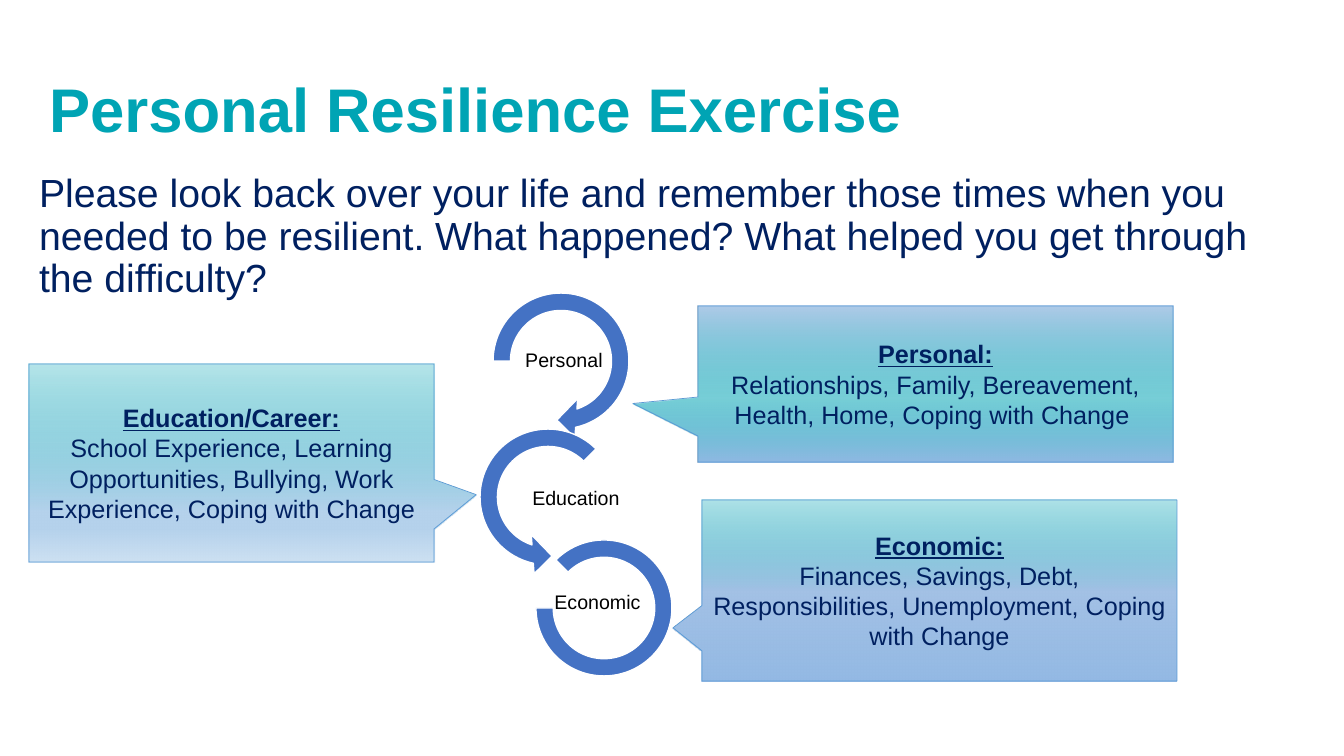
"""Build the Personal Resilience Exercise slide."""
from dataclasses import dataclass

from lxml import etree
from pptx import Presentation
from pptx import util as u
from pptx.dml.color import RGBColor
from pptx.enum import shapes, text
from pptx.oxml import ns

PX = u.Inches(7.5) / 756


@dataclass(frozen=True)
class Theme:
    font: str = "Arial"
    teal: str = "00A4B4"
    navy: str = "002060"
    black: str = "000000"
    white: str = "FFFFFF"
    ring: str = "4472C4"
    outline: str = "5B9BD5"
    title_size: int = 44
    body_size: int = 28
    callout_size: int = 18
    label_size: int = 14


@dataclass(frozen=True)
class Area:
    left: int
    top: int
    width: int
    height: int

    def emu(self) -> tuple[int, int, int, int]:
        return tuple(round(n * PX) for n in (self.left, self.top, self.width, self.height))


@dataclass(frozen=True)
class Stop:
    percent: int
    color: str
    alpha: int = 100


@dataclass(frozen=True)
class Ring:
    kind: shapes.MSO_SHAPE
    area: Area
    adjustments: tuple[float, ...]
    label: str
    label_area: Area


@dataclass(frozen=True)
class Callout:
    area: Area
    pointer: tuple[float, float]
    stops: tuple[Stop, ...]
    heading: str
    detail: str


THEME = Theme()
TITLE_AREA = Area(39, 40, 919, 146)
BODY_AREA = Area(29, 169, 1256, 498)
TITLE = "Personal Resilience Exercise"
BODY = ("Please look back over your life and remember those times when you needed to be "
        "resilient. What happened? What helped you get through the difficulty?")

RINGS = (
    Ring(shapes.MSO_SHAPE.CIRCULAR_ARROW, Area(482, 282, 158, 158),
         (0.11, 11.42, 45, 108, 0.125), "Personal", Area(515, 338, 98, 46)),
    Ring(shapes.MSO_SHAPE.LEFT_CIRCULAR_ARROW, Area(469, 418, 158, 158),
         (0.11, 11.42, 63, 189, 0.125), "Education", Area(515, 475, 122, 48)),
    Ring(shapes.MSO_SHAPE.BLOCK_ARC, Area(536, 540, 136, 136),
         (135, 108, 0.127), "Economic", Area(547, 575, 101, 56)),
)

CALLOUTS = (
    Callout(Area(698, 306, 475, 156), (-0.637, 0.125),
            (Stop(0, "B1CBE9"), Stop(59, THEME.teal, 53), Stop(100, "93B9E4")),
            "Personal:",
            "Relationships, Family, Bereavement, Health, Home, Coping with Change "),
    Callout(Area(29, 364, 405, 198), (0.604, 0.16),
            (Stop(0, THEME.teal, 28), Stop(74, "B5D2EC"), Stop(83, "B5D2EC"),
             Stop(100, "CEE1F2")),
            "Education/Career:",
            "School Experience, Learning Opportunities, Bullying, Work Experience, "
            "Coping with Change"),
    Callout(Area(702, 500, 475, 181), (-0.561, 0.206),
            (Stop(0, THEME.teal, 31), Stop(50, "A3C1E5"), Stop(100, "93B9E4")),
            "Economic:",
            "Finances, Savings, Debt, Responsibilities, Unemployment, Coping with Change"),
)


def style(para, size: int, color: str, align, bold: bool = False, spacing: float = 1.0) -> None:
    """Format one paragraph."""
    para.alignment = align
    para.line_spacing = spacing
    para.space_before = u.Pt(0)
    para.font.name = THEME.font
    para.font.size = u.Pt(size)
    para.font.bold = bold
    para.font.color.rgb = RGBColor.from_string(color)


def fill_placeholder(box, area: Area, words: str, size: int, color: str, bold: bool) -> None:
    """Move a placeholder and give it unbulleted text."""
    box.left, box.top, box.width, box.height = area.emu()
    frame = box.text_frame
    frame.text = words
    frame.word_wrap = True
    frame.auto_size = text.MSO_AUTO_SIZE.NONE
    para = frame.paragraphs[0]
    properties = para._p.get_or_add_pPr()
    properties.set("marL", "0")
    properties.set("indent", "0")
    etree.SubElement(properties, ns.qn("a:buNone"))
    style(para, size, color, text.PP_ALIGN.LEFT, bold, 0.9)


def add_outlined(parent, kind, area: Area, adjustments: tuple[float, ...],
                 color: str, width: float):
    """Add an adjusted preset shape with a plain outline."""
    shape = parent.add_shape(kind, *area.emu())
    shape.shadow.inherit = False
    for index, value in enumerate(adjustments):
        shape.adjustments[index] = value
    shape.line.color.rgb = RGBColor.from_string(color)
    shape.line.width = u.Pt(width)
    return shape


def add_ring(parent, ring: Ring) -> None:
    """Draw a ring and the label inside it."""
    shape = add_outlined(parent, ring.kind, ring.area, ring.adjustments, THEME.white, 1)
    shape.fill.solid()
    shape.fill.fore_color.rgb = RGBColor.from_string(THEME.ring)
    frame = parent.add_textbox(*ring.label_area.emu()).text_frame
    frame.word_wrap = True
    frame.vertical_anchor = text.MSO_ANCHOR.MIDDLE
    frame.margin_left = frame.margin_right = frame.margin_top = frame.margin_bottom = round(PX)
    frame.text = ring.label
    style(frame.paragraphs[0], THEME.label_size, THEME.black, text.PP_ALIGN.CENTER, spacing=0.9)


def set_gradient(shape, stops: tuple[Stop, ...]) -> None:
    """Fill a shape from top to bottom through the given stops."""
    shape.fill.gradient()
    shape.fill.gradient_angle = 270
    stop_list = shape._element.spPr.find(".//" + ns.qn("a:gsLst"))
    for old in list(stop_list):
        stop_list.remove(old)
    for stop in stops:
        entry = etree.SubElement(stop_list, ns.qn("a:gs"), pos=str(stop.percent * 1000))
        color = etree.SubElement(entry, ns.qn("a:srgbClr"), val=stop.color)
        if stop.alpha < 100:
            etree.SubElement(color, ns.qn("a:alpha"), val=str(stop.alpha * 1000))


def add_callout(parent, callout: Callout) -> None:
    """Draw a callout with a heading and its detail."""
    shape = add_outlined(parent, shapes.MSO_SHAPE.RECTANGULAR_CALLOUT, callout.area,
                         callout.pointer, THEME.outline, 0.5)
    set_gradient(shape, callout.stops)
    frame = shape.text_frame
    frame.word_wrap = True
    frame.vertical_anchor = text.MSO_ANCHOR.MIDDLE
    frame.text = f"{callout.heading}\n{callout.detail}"
    heading, detail = frame.paragraphs
    style(heading, THEME.callout_size, THEME.navy, text.PP_ALIGN.CENTER, bold=True)
    heading.font.underline = True
    style(detail, THEME.callout_size, THEME.navy, text.PP_ALIGN.CENTER)


def main() -> None:
    """Assemble and save the deck."""
    deck = Presentation()
    deck.slide_width, deck.slide_height = round(1344 * PX), round(756 * PX)
    page = deck.slides.add_slide(deck.slide_layouts[1])
    title, body = page.placeholders
    fill_placeholder(title, TITLE_AREA, TITLE, THEME.title_size, THEME.teal, True)
    fill_placeholder(body, BODY_AREA, BODY, THEME.body_size, THEME.navy, False)
    cycle = page.shapes.add_group_shape().shapes
    for ring in RINGS:
        add_ring(cycle, ring)
    for callout in CALLOUTS:
        add_callout(page.shapes, callout)
    deck.save("out.pptx")


if __name__ == "__main__":
    main()
